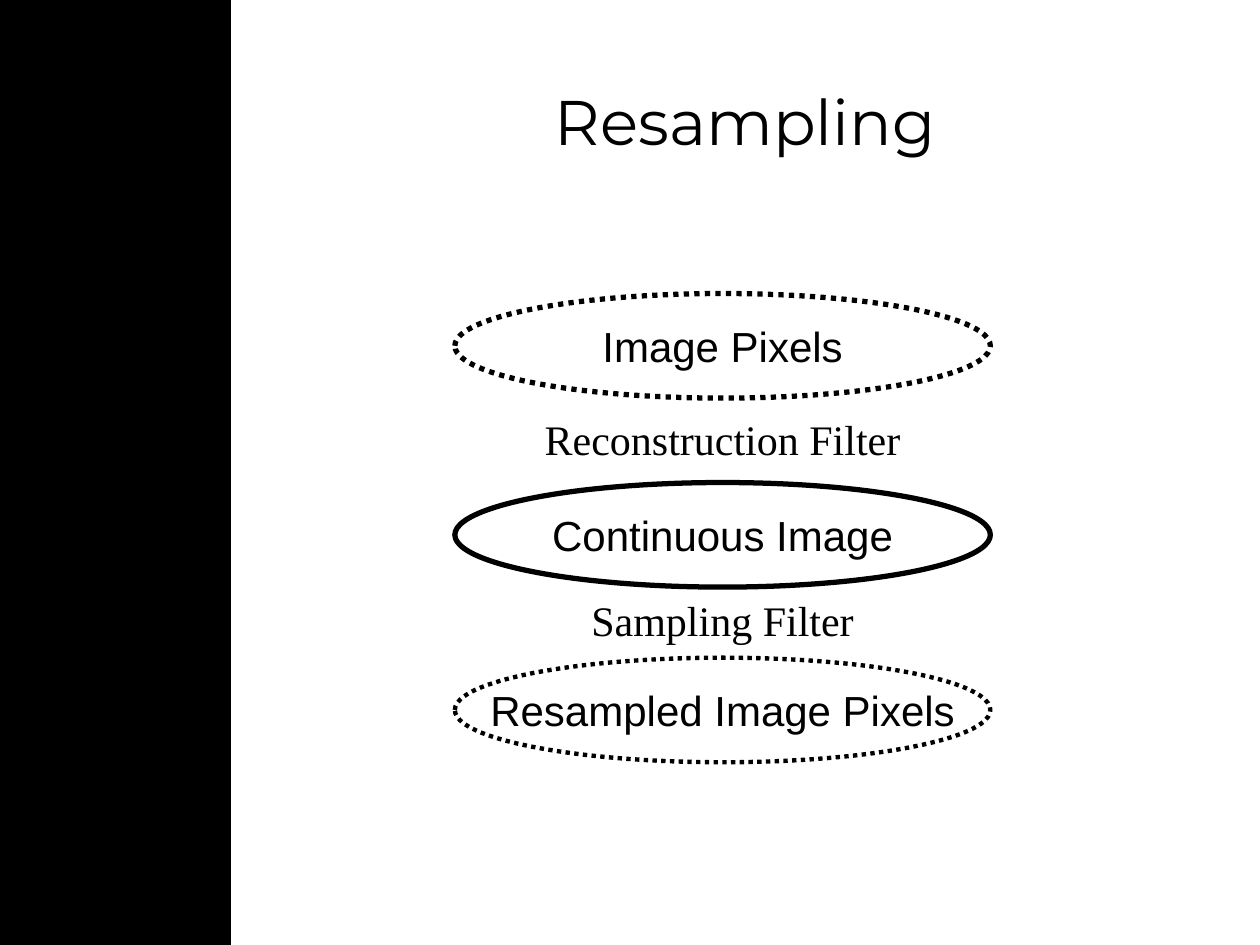
from pptx import Presentation
from pptx.dml.color import RGBColor
from pptx.enum.dml import MSO_LINE as Dash
from pptx.enum.shapes import MSO_SHAPE as Shape
from pptx.enum.text import MSO_ANCHOR as Anchor, MSO_AUTO_SIZE as Fit, PP_ALIGN as Align
from pptx.util import Inches, Pt

BLACK = RGBColor(0, 0, 0)
WHITE = RGBColor(255, 255, 255)

TITLE = ("Resampling", (2, 0.33, 7.83, 1.25))
STAGES = [
    ("Image Pixels", 2.33, 3, Dash.ROUND_DOT),
    ("Continuous Image", 3.83, 3, None),
    ("Resampled Image Pixels", 5.22, 2.5, Dash.ROUND_DOT),
]
FILTERS = [
    ("Reconstruction Filter", 3.23, 3.02),
    ("Sampling Filter", 4.67, 2.28),
]
LEFT, WIDTH, HIGH = 3.61, 4.25, 0.83
MID = LEFT + WIDTH / 2


def write(shape, text, font, size=24, wrap=False, fit=Fit.NONE):
    frame = shape.text_frame
    look = {"word_wrap": wrap, "auto_size": fit, "vertical_anchor": Anchor.MIDDLE}
    for key, value in look.items():
        setattr(frame, key, value)
    par = frame.paragraphs[0]
    par.alignment = Align.CENTER
    run = par.add_run()
    run.text = text
    for key, value in {"name": font, "size": Pt(size)}.items():
        setattr(run.font, key, value)
    run.font.color.rgb = BLACK


def draw(slide, kind, box, weight, dash=None):
    shape = slide.shapes.add_shape(kind, *map(Inches, box))
    shape.shadow.inherit = False
    shape.fill.background()
    shape.line.color.rgb = BLACK
    shape.line.width = Pt(weight)
    if dash:
        shape.line.dash_style = dash
    return shape


def main():
    deck = Presentation()
    deck.slide_width, deck.slide_height = Inches(10), Inches(7.5)
    slide = deck.slides.add_slide(deck.slide_layouts[6])
    back = slide.background.fill
    back.solid()
    back.fore_color.rgb = WHITE

    band = draw(slide, Shape.RECTANGLE, (0, 0, 1.83, 7.5), 0.75)
    band.fill.solid()
    band.fill.fore_color.rgb = BLACK

    text, box = TITLE
    title = slide.shapes.add_textbox(*map(Inches, box))
    write(title, text, "Montserrat", 36, True)

    for text, top, weight, dash in STAGES:
        oval = draw(slide, Shape.OVAL, (LEFT, top, WIDTH, HIGH), weight, dash)
        write(oval, text, "Arial")

    for text, top, width in FILTERS:
        box = (MID - width / 2, top, width, 0.5)
        label = slide.shapes.add_textbox(*map(Inches, box))
        write(label, text, "Times New Roman", fit=Fit.SHAPE_TO_FIT_TEXT)

    deck.save("out.pptx")


if __name__ == "__main__":
    main()
